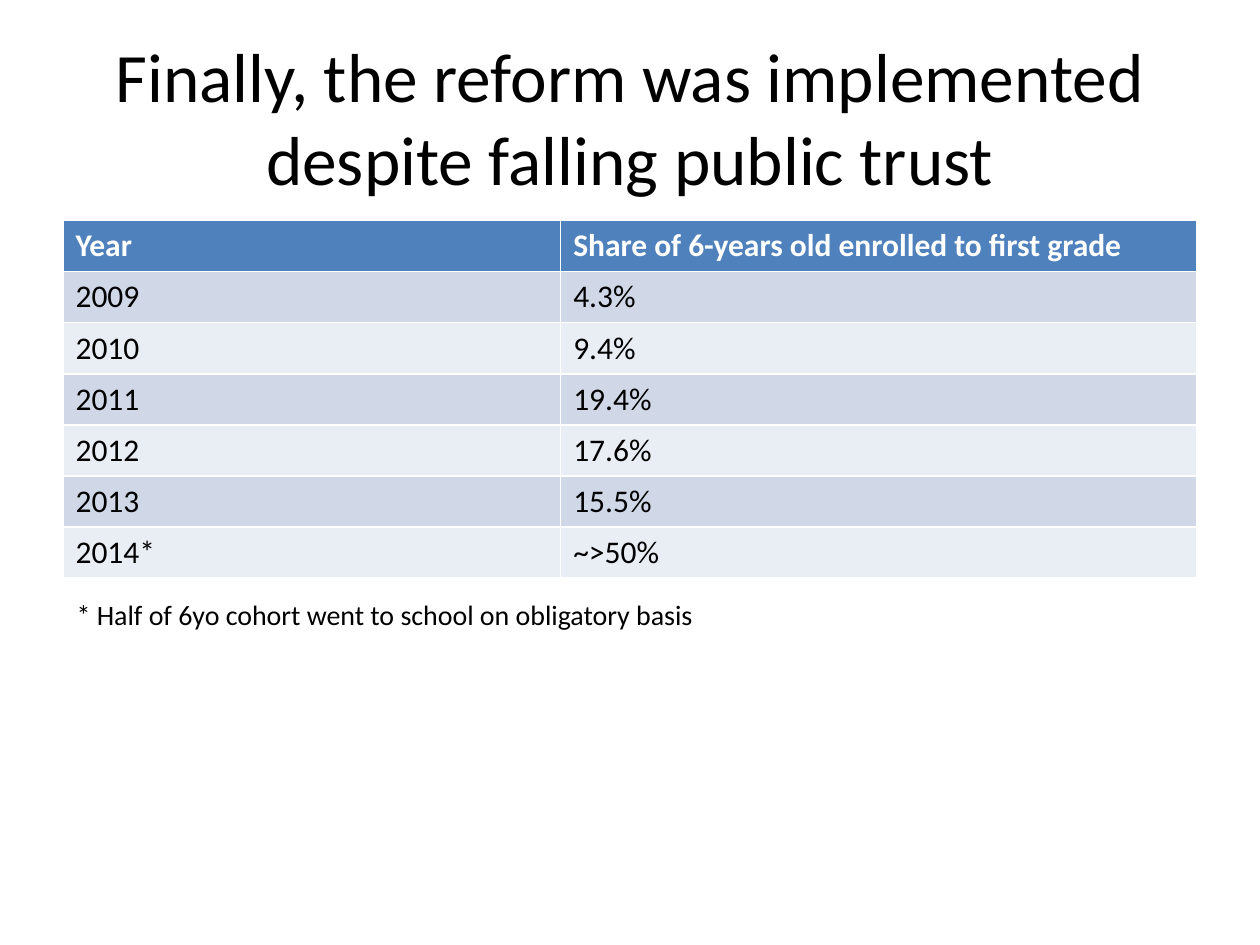
from pptx import Presentation
from pptx.dml.color import RGBColor
from pptx.enum.text import MSO_ANCHOR as Anchor, PP_ALIGN as Align
from pptx.util import Inches, Pt

BLACK = RGBColor(0x00, 0x00, 0x00)
WHITE = RGBColor(0xFF, 0xFF, 0xFF)
HEADER_BLUE = RGBColor(0x4F, 0x81, 0xBD)
BAND_DARK = RGBColor(0xD0, 0xD8, 0xE8)
BAND_LIGHT = RGBColor(0xE9, 0xED, 0xF4)

ENROLMENT = [
    ("Year", "Share of 6-years old enrolled to first grade"),
    ("2009", "4.3%"),
    ("2010", "9.4%"),
    ("2011", "19.4%"),
    ("2012", "17.6%"),
    ("2013", "15.5%"),
    ("2014*", "~>50%"),
]
COLUMN_WIDTHS = (3.95, 5.05)
TABLE_HEIGHT = 2.84


def add_run(paragraph, text, size, color=BLACK, bold=False):
    """Add one formatted run to a paragraph."""
    run = paragraph.add_run()
    run.text = text
    run.font.name = "Calibri"
    run.font.size = Pt(size)
    run.font.bold = bold
    run.font.color.rgb = color


def add_text(slide, box, text, size, align=Align.LEFT, anchor=Anchor.TOP):
    """Add a wrapping text box at the given left, top, width and height."""
    frame = slide.shapes.add_textbox(*map(Inches, box)).text_frame
    frame.word_wrap = True
    frame.vertical_anchor = anchor
    paragraph = frame.paragraphs[0]
    paragraph.alignment = align
    add_run(paragraph, text, size)


def fill_cell(cell, text, fill, color, bold):
    """Set the text and background of a table cell."""
    cell.fill.solid()
    cell.fill.fore_color.rgb = fill
    add_run(cell.text_frame.paragraphs[0], text, 18, color, bold)


def add_enrolment_table(slide):
    """Add the banded table of enrolment by year."""
    table = slide.shapes.add_table(
        len(ENROLMENT), len(COLUMN_WIDTHS), Inches(0.5), Inches(1.75),
        Inches(sum(COLUMN_WIDTHS)), Inches(TABLE_HEIGHT)).table
    for column, width in zip(table.columns, COLUMN_WIDTHS):
        column.width = Inches(width)
    for row_index, values in enumerate(ENROLMENT):
        header = row_index == 0
        band = BAND_DARK if row_index % 2 else BAND_LIGHT
        fill = HEADER_BLUE if header else band
        color = WHITE if header else BLACK
        for column_index, text in enumerate(values):
            fill_cell(table.cell(row_index, column_index), text, fill, color, header)


def main():
    """Build and save the slide."""
    presentation = Presentation()
    presentation.slide_width = Inches(10)
    presentation.slide_height = Inches(7.5)
    slide = presentation.slides.add_slide(presentation.slide_layouts[6])
    add_text(slide, (0.5, 0.3, 9, 1.25),
             "Finally, the reform was implemented despite falling public trust",
             39.6, Align.CENTER, Anchor.MIDDLE)
    add_enrolment_table(slide)
    add_text(slide, (0.51, 4.69, 9.06, 0.37),
             "* Half of 6yo cohort went to school on obligatory basis", 16)
    presentation.save("out.pptx")


if __name__ == "__main__":
    main()
